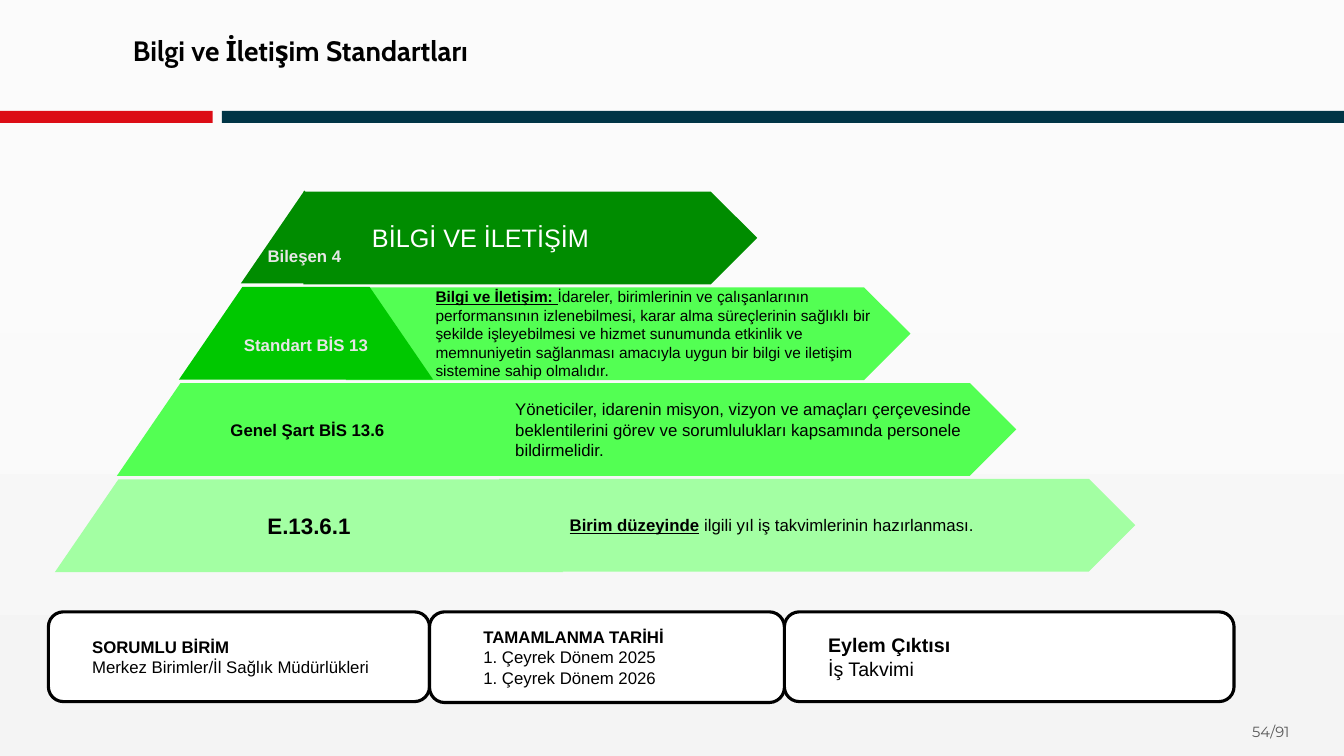
from pptx import Presentation
from pptx.dml.color import RGBColor
from pptx.enum.shapes import MSO_SHAPE as SHAPE
from pptx.enum.text import MSO_ANCHOR as ANCHOR, PP_ALIGN as ALIGN
from pptx.oxml import parse_xml
from pptx.oxml.ns import nsdecls
from pptx.util import Inches, Pt

BLACK = RGBColor(0x00, 0x00, 0x00)
WHITE = RGBColor(0xFF, 0xFF, 0xFF)
GREY = RGBColor(0x59, 0x59, 0x59)
PALE = RGBColor(0xE7, 0xE6, 0xE6)
RED = RGBColor(0xDC, 0x0C, 0x15)
NAVY = RGBColor(0x00, 0x35, 0x46)
DARK_GREEN = RGBColor(0x00, 0x8C, 0x00)
GREEN = RGBColor(0x00, 0xC8, 0x00)
LIGHT_GREEN = RGBColor(0x53, 0xFF, 0x53)
PALE_GREEN = RGBColor(0xA3, 0xFF, 0xA3)

BACKGROUND_STOPS = [(0, "FBFBFB"), (44, "FAFAFA"), (100, "F4F4F4")]

ROW_HEIGHT = 0.92
SLOPE = 0.63  # horizontal run of a pyramid side within one row

# Pyramid label: text, size, colour, side inset, top inset
# Arrow: left, width, text inset, size, colour, runs as (text, emphasised)
ROWS = [
    (DARK_GREEN, ("Bileşen 4", 12, PALE, 0.02, 0.41),
     DARK_GREEN, (3.01, 4.5, 0.68, 18, WHITE, [("BİLGİ VE İLETİŞİM", False)])),
    (GREEN, ("Standart BİS 13", 12, PALE, 0.54, 0.26),
     LIGHT_GREEN, (3.43, 5.6, 0.89, 11, BLACK, [
         ("Bilgi ve İletişim: ", True),
         ("İdareler, birimlerinin ve çalışanlarının performansının "
          "izlenebilmesi, karar alma süreçlerinin sağlıklı bir şekilde "
          "işleyebilmesi ve hizmet sunumunda etkinlik ve memnuniyetin "
          "sağlanması amacıyla uygun bir bilgi ve iletişim sistemine sahip "
          "olmalıdır.", False)])),
    (LIGHT_GREEN, ("Genel Şart BİS 13.6", 12, BLACK, 0.79, 0.03),
     LIGHT_GREEN, (4.22, 5.86, 0.89, 12, BLACK, [
         ("Yöneticiler, idarenin misyon, vizyon ve amaçları çerçevesinde "
          "beklentilerini görev ve sorumlulukları kapsamında personele "
          "bildirmelidir.", False)])),
    (PALE_GREEN, ("E.13.6.1", 16, BLACK, 1.05, 0.03),
     PALE_GREEN, (4.95, 6.31, 0.7, 12, BLACK, [
         ("Birim düzeyinde", True),
         (" ilgili yıl iş takvimlerinin hazırlanması.", False)])),
]

# Left, width, height, text inset, size, heading, lines
CARDS = [
    (0.48, 3.78, 0.89, 0.39, 12, "SORUMLU BİRİM",
     ["Merkez Birimler/İl Sağlık Müdürlükleri"]),
    (7.78, 4.46, 0.89, 0.39, 14, "Eylem Çıktısı", ["İş Takvimi"]),
    (4.26, 3.52, 0.9, 0.49, 12, "TAMAMLANMA TARİHİ",
     ["1. Çeyrek Dönem 2025", "1. Çeyrek Dönem 2026"]),
]


def set_background(s):
    stops = "".join(
        f'<a:gs pos="{pos * 1000}"><a:srgbClr val="{color}"/></a:gs>'
        for pos, color in BACKGROUND_STOPS)
    s.element.cSld.insert(0, parse_xml(
        f'<p:bg {nsdecls("p", "a")}><p:bgPr><a:gradFill><a:gsLst>{stops}'
        '</a:gsLst><a:lin ang="5400000" scaled="0"/></a:gradFill>'
        '<a:effectLst/></p:bgPr></p:bg>'))


def paint(sp, fill, line=None):
    sp.shadow.inherit = False
    sp.fill.solid()
    sp.fill.fore_color.rgb = fill
    if line is None:
        sp.line.fill.background()
    else:
        sp.line.color.rgb = line
        sp.line.width = Pt(2.25)


def add_box(s, kind, left, top, width, height, fill, line=None):
    sp = s.shapes.add_shape(kind, Inches(left), Inches(top),
                            Inches(width), Inches(height))
    paint(sp, fill, line)
    return sp


def set_frame(sp, left, top, right, bottom, anchor=ANCHOR.MIDDLE):
    tf = sp.text_frame
    tf.word_wrap = True
    tf.vertical_anchor = anchor
    tf.margin_left, tf.margin_top = Inches(left), Inches(top)
    tf.margin_right, tf.margin_bottom = Inches(right), Inches(bottom)
    return tf


def add_run(p, text, size, color, bold=False, underline=False, font="Arial"):
    r = p.add_run()
    r.text = text
    r.font.name = font
    r.font.size = Pt(size)
    r.font.color.rgb = color
    r.font.bold = bold
    r.font.underline = underline


def add_label(s, left, top, width, height, text, size, color, font, bold):
    sp = s.shapes.add_textbox(Inches(left), Inches(top),
                              Inches(width), Inches(height))
    p = set_frame(sp, 0.1, 0.05, 0.1, 0.05, ANCHOR.TOP).paragraphs[0]
    p.line_spacing = 0.9 if bold else 1.0
    add_run(p, text, size, color, bold, font=font)


def add_arrow(s, top, fill, left, width, inset, size, color, runs):
    sp = add_box(s, SHAPE.PENTAGON, left, top, width, ROW_HEIGHT, fill)
    p = set_frame(sp, inset, 0.05, 0.1, 0.05).paragraphs[0]
    p.alignment = ALIGN.LEFT
    for text, emphasised in runs:
        add_run(p, text, size, color, emphasised, emphasised)


def add_pyramid_step(s, i, fill, text, size, color, side, inset_top):
    left, top = 2.39 - 0.615 * i, 1.89 + 0.955 * i
    right, bottom = left + 2 * SLOPE * (i + 1), top + ROW_HEIGHT
    corners = [(left, bottom), (left + SLOPE, top),
               (right - SLOPE, top), (right, bottom)]
    points = [(Inches(x), Inches(y)) for x, y in corners]
    builder = s.shapes.build_freeform(*points[0])
    builder.add_line_segments(points[1:], close=True)
    sp = builder.convert_to_shape()
    paint(sp, fill)
    p = set_frame(sp, side, inset_top, side, 0.03).paragraphs[0]
    p.alignment = ALIGN.CENTER
    add_run(p, text, size, color, True)


def add_card(s, left, width, height, inset, size, heading, lines):
    sp = add_box(s, SHAPE.ROUNDED_RECTANGLE, left, 6.07, width, height,
                 WHITE, BLACK)
    tf = set_frame(sp, inset, 0.05, 0.1, 0.05)
    for i, text in enumerate([heading, *lines]):
        p = tf.add_paragraph() if i else tf.paragraphs[0]
        p.alignment = ALIGN.LEFT
        add_run(p, text, size, BLACK, bold=i == 0)


def main():
    prs = Presentation()
    prs.slide_width, prs.slide_height = Inches(13.33), Inches(7.5)
    s = prs.slides.add_slide(prs.slide_layouts[6])
    set_background(s)
    add_label(s, 12.32, 7.12, 0.9, 0.4, "54/91", 10.5, GREY,
              "Montserrat", False)
    add_box(s, SHAPE.RECTANGLE, 0, 1.1, 2.11, 0.12, RED)
    add_box(s, SHAPE.RECTANGLE, 2.2, 1.1, 11.13, 0.12, NAVY)
    add_label(s, 1.22, 0.32, 4.07, 0.43, "Bilgi ve İletişim Standartları",
              20, BLACK, "Cabin", True)
    for i, (step_fill, step, arrow_fill, arrow) in enumerate(ROWS):
        add_arrow(s, 1.9 + 0.95 * i, arrow_fill, *arrow)
        add_pyramid_step(s, i, step_fill, *step)
    for card in CARDS:
        add_card(s, *card)
    prs.save("out.pptx")


if __name__ == "__main__":
    main()
